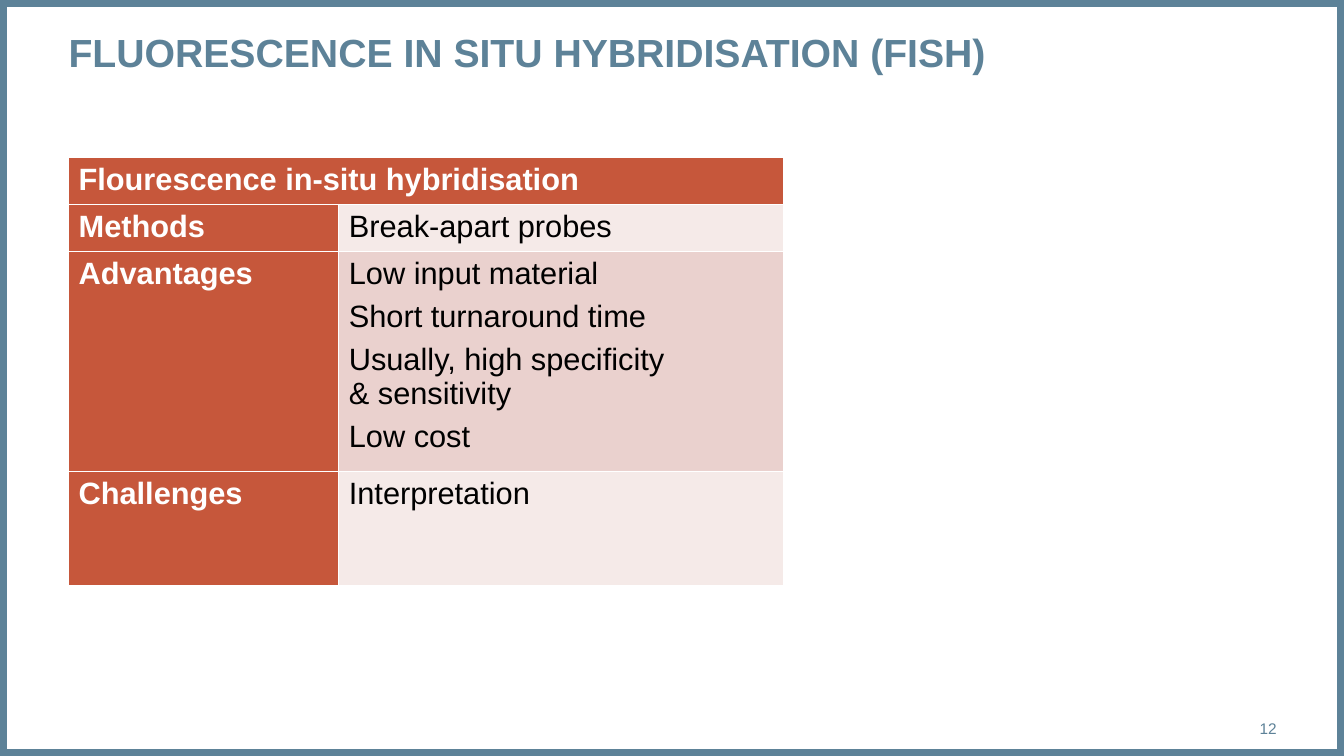
import pptx
import pptx.dml.color
import pptx.enum.shapes
import pptx.enum.text
import pptx.oxml
import pptx.oxml.ns
import pptx.util

Pt = pptx.util.Pt
ALIGN = pptx.enum.text.PP_ALIGN
ANCHOR = pptx.enum.text.MSO_ANCHOR
COLORS = {
    "slate": "5D8298",
    "rust": "C6573B",
    "pale": "F5EAE8",
    "rose": "EAD1CE",
    "white": "FFFFFF",
    "black": "000000",
}
TITLE = {"size": Pt(28), "bold": True}
LABEL = {"size": Pt(22), "bold": True}
BODY = {"size": Pt(22), "bold": False}
NUMBER = {"size": Pt(11), "bold": False}
HEADING = "Flourescence in-situ hybridisation"
ROWS = [
    ("Methods", ["Break-apart probes"], "pale", 32),
    ("Advantages", ["Low input material", "Short turnaround time",
                    "Usually, high specificity \v& sensitivity", "Low cost"], "rose", 148),
    ("Challenges", ["Interpretation"], "pale", 81),
]


def rgb(name):
    """Return the named colour."""
    return pptx.dml.color.RGBColor.from_string(COLORS[name])


def write(tf, lines, fmt, color, align=ALIGN.LEFT, gap=0):
    """Fill a text frame with one paragraph per line."""
    for i, line in enumerate(lines):
        p = tf.paragraphs[0] if i == 0 else tf.add_paragraph()
        p.text = line
        p.alignment = align
        p.space_after = Pt(gap)
        for r in p.runs:
            r.font.name = "Arial"
            r.font.color.rgb = rgb(color)
            for key, value in fmt.items():
                setattr(r.font, key, value)


def add_frame(s, x, y, w, h):
    """Draw the border around the slide."""
    sp = s.shapes.add_shape(pptx.enum.shapes.MSO_SHAPE.RECTANGLE, Pt(x), Pt(y), Pt(w), Pt(h))
    sp.shadow.inherit = False
    sp.fill.background()
    sp.line.color.rgb = rgb("slate")
    sp.line.width = Pt(10)


def add_label(s, x, y, w, h, text, fmt, align=ALIGN.LEFT, anchor=ANCHOR.TOP):
    """Place a slate text box without margins."""
    tf = s.shapes.add_textbox(Pt(x), Pt(y), Pt(w), Pt(h)).text_frame
    settings = {"word_wrap": True, "vertical_anchor": anchor, "margin_left": 0,
                "margin_right": 0, "margin_top": 0, "margin_bottom": 0}
    for key, value in settings.items():
        setattr(tf, key, value)
    write(tf, [text], fmt, "slate", align)


def style_cell(cell, fill):
    """Fill a cell and give it thin white borders."""
    cell.fill.solid()
    cell.fill.fore_color.rgb = rgb(fill)
    tcPr = cell._tc.get_or_add_tcPr()
    for i, side in enumerate("LRTB"):
        tcPr.insert(i, pptx.oxml.parse_xml(
            f'<a:ln{side} {pptx.oxml.ns.nsdecls("a")} w="{Pt(1)}"><a:solidFill>'
            f'<a:srgbClr val="{COLORS["white"]}"/></a:solidFill></a:ln{side}>'))


def add_summary(s, x, y, w, h):
    """Build the table of methods, advantages and challenges."""
    heading_h = h - sum(row[3] for row in ROWS)
    table = s.shapes.add_table(len(ROWS) + 1, 2, Pt(x), Pt(y), Pt(w), Pt(h)).table
    table.horz_banding = False
    table.columns[0].width = Pt(193)
    table.columns[1].width = Pt(w - 193)
    table.rows[0].height = Pt(heading_h)
    for cell in table.rows[0].cells:
        style_cell(cell, "rust")
    table.cell(0, 0).merge(table.cell(0, 1))
    write(table.cell(0, 0).text_frame, [HEADING], LABEL, "white")
    for i, (label, lines, fill, height) in enumerate(ROWS, 1):
        table.rows[i].height = Pt(height)
        left, right = table.cell(i, 0), table.cell(i, 1)
        style_cell(left, "rust")
        style_cell(right, fill)
        write(left.text_frame, [label], LABEL, "white")
        write(right.text_frame, lines, BODY, "black", gap=6 if len(lines) > 1 else 0)


def main():
    """Build the slide and save it."""
    prs = pptx.Presentation()
    prs.slide_width, prs.slide_height = Pt(960), Pt(540)
    s = prs.slides.add_slide(prs.slide_layouts[6])
    add_frame(s, 0, 0, 960, 540)
    add_label(s, 49, 20, 863, 68, "FLUORESCENCE IN SITU HYBRIDISATION (FISH)", TITLE)
    add_summary(s, 49, 112.5, 510.5, 292.5)
    add_label(s, 850, 506, 62, 29, "12", NUMBER, ALIGN.RIGHT, ANCHOR.MIDDLE)
    prs.save("out.pptx")


if __name__ == "__main__":
    main()
